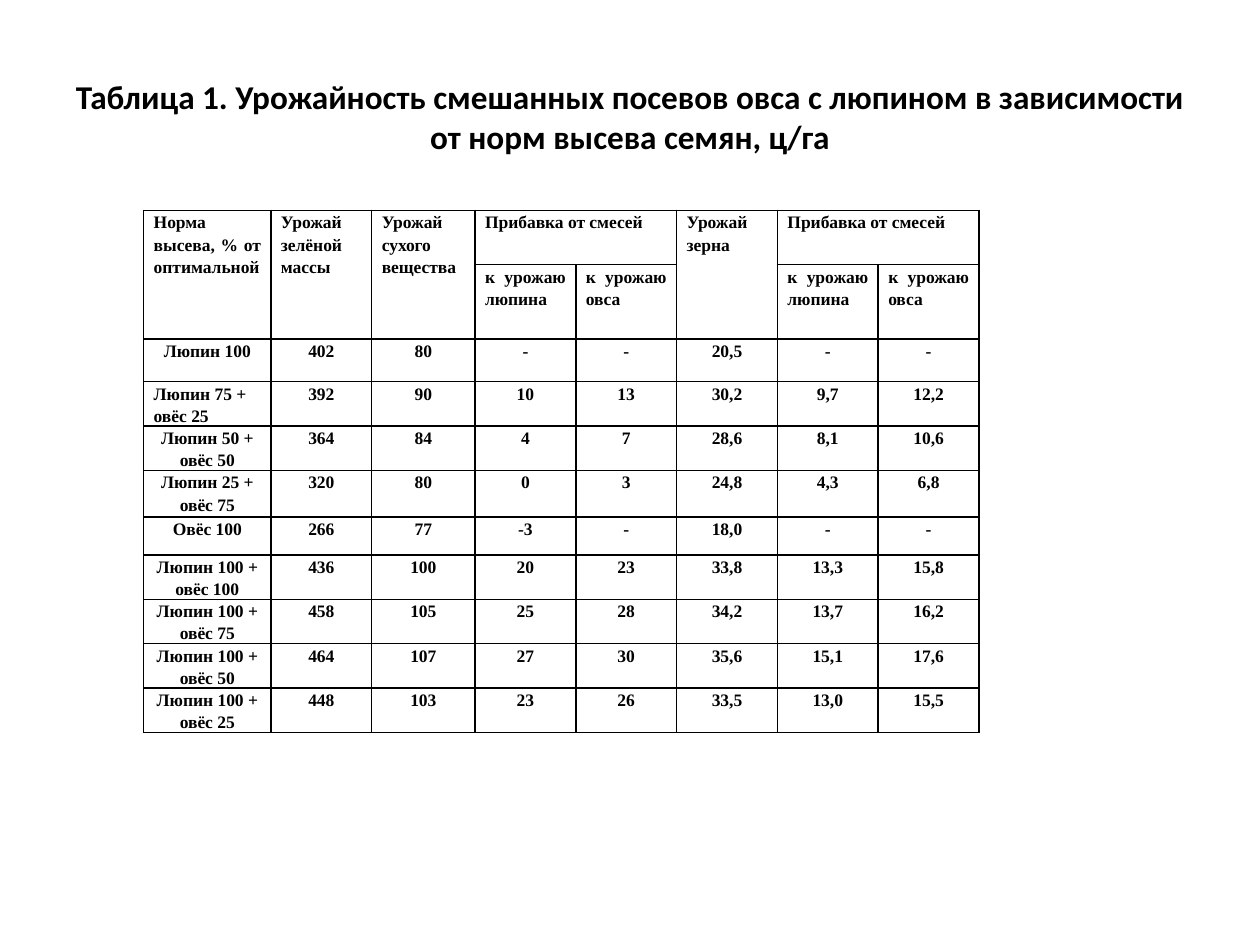
from lxml import etree
from pptx import Presentation
from pptx.dml.color import RGBColor
from pptx.enum.text import MSO_ANCHOR, MSO_AUTO_SIZE, PP_ALIGN
from pptx.oxml.ns import qn
from pptx.util import Inches, Pt

LEFT, CENTER, JUSTIFY = PP_ALIGN.LEFT, PP_ALIGN.CENTER, PP_ALIGN.JUSTIFY
TOP, MIDDLE = MSO_ANCHOR.TOP, MSO_ANCHOR.MIDDLE
NO_AUTOFIT = MSO_AUTO_SIZE.NONE
BLACK = "000000"


def style_paragraph(paragraph, font_name, size, alignment):
    paragraph.alignment = alignment
    paragraph.font.name = font_name
    paragraph.font.size = Pt(size)
    paragraph.font.bold = True
    paragraph.font.color.rgb = RGBColor.from_string(BLACK)


def add_borders(cell):
    properties = cell._tc.get_or_add_tcPr()
    for side in ("a:lnL", "a:lnR", "a:lnT", "a:lnB"):
        line = etree.SubElement(properties, qn(side), w=str(Pt(1)))
        fill = etree.SubElement(line, qn("a:solidFill"))
        etree.SubElement(fill, qn("a:srgbClr"), val=BLACK)


presentation = Presentation()
presentation.slide_width = Inches(10)
presentation.slide_height = Inches(7.5)
slide = presentation.slides.add_slide(presentation.slide_layouts[5])

title = slide.shapes.title
title.left, title.top = Inches(0.5), Inches(0.3)
title.width, title.height = Inches(9), Inches(1.25)
title.text_frame.text = (
    "Таблица 1. Урожайность смешанных посевов овса с люпином "
    "в зависимости от норм высева семян, ц/га"
)
title.text_frame.auto_size = NO_AUTOFIT
title.text_frame.vertical_anchor = MIDDLE
style_paragraph(title.text_frame.paragraphs[0], "Calibri", 19, CENTER)

gain, lupin_gain, oat_gain = "Прибавка от смесей", "к урожаю люпина", "к урожаю овса"
header_rows = [
    ["Норма высева, % от оптимальной", "Урожай зелёной массы", "Урожай сухого вещества",
     gain, "", "Урожай зерна", gain, ""],
    ["", "", "", lupin_gain, oat_gain, "", lupin_gain, oat_gain],
]
yield_rows = [
    ["Люпин 100", "402", "80", "-", "-", "20,5", "-", "-"],
    ["Люпин 75 + овёс 25", "392", "90", "10", "13", "30,2", "9,7", "12,2"],
    ["Люпин 50 + овёс 50", "364", "84", "4", "7", "28,6", "8,1", "10,6"],
    ["Люпин 25 + овёс 75", "320", "80", "0", "3", "24,8", "4,3", "6,8"],
    ["Овёс 100", "266", "77", "-3", "-", "18,0", "-", "-"],
    ["Люпин 100 + овёс 100", "436", "100", "20", "23", "33,8", "13,3", "15,8"],
    ["Люпин 100 + овёс 75", "458", "105", "25", "28", "34,2", "13,7", "16,2"],
    ["Люпин 100 + овёс 50", "464", "107", "27", "30", "35,6", "15,1", "17,6"],
    ["Люпин 100 + овёс 25", "448", "103", "23", "26", "33,5", "13,0", "15,5"],
]
rows = header_rows + yield_rows
column_widths = [1.01, 0.8, 0.82] + [0.8] * 5
row_heights = [0.43, 0.59, 0.34, 0.31, 0.34, 0.37, 0.3, 0.31, 0.26, 0.32, 0.34]

table = slide.shapes.add_table(
    len(rows), len(column_widths), Inches(1.14), Inches(1.67), Inches(6.65), Inches(4.35)
).table
table.first_row = False
table.horz_banding = False
for column, width in zip(table.columns, column_widths):
    column.width = Inches(width)
for row, height in zip(table.rows, row_heights):
    row.height = Inches(height)

for row_index, row_texts in enumerate(rows):
    for column_index, text in enumerate(row_texts):
        cell = table.cell(row_index, column_index)
        cell.text = text
        cell.margin_left = cell.margin_right = Inches(0.08)
        cell.margin_top = cell.margin_bottom = 0
        cell.vertical_anchor = TOP
        add_borders(cell)
        cell.fill.background()
        if row_index < len(header_rows):
            alignment = JUSTIFY
        elif text == "Люпин 75 + овёс 25":
            alignment = LEFT
        else:
            alignment = CENTER
        paragraph = cell.text_frame.paragraphs[0]
        paragraph.line_spacing = 1.15
        style_paragraph(paragraph, "Times New Roman", 10, alignment)

for column_index in (0, 1, 2, 5):
    table.cell(0, column_index).merge(table.cell(1, column_index))
for column_index in (3, 6):
    table.cell(0, column_index).merge(table.cell(0, column_index + 1))

presentation.save("out.pptx")
